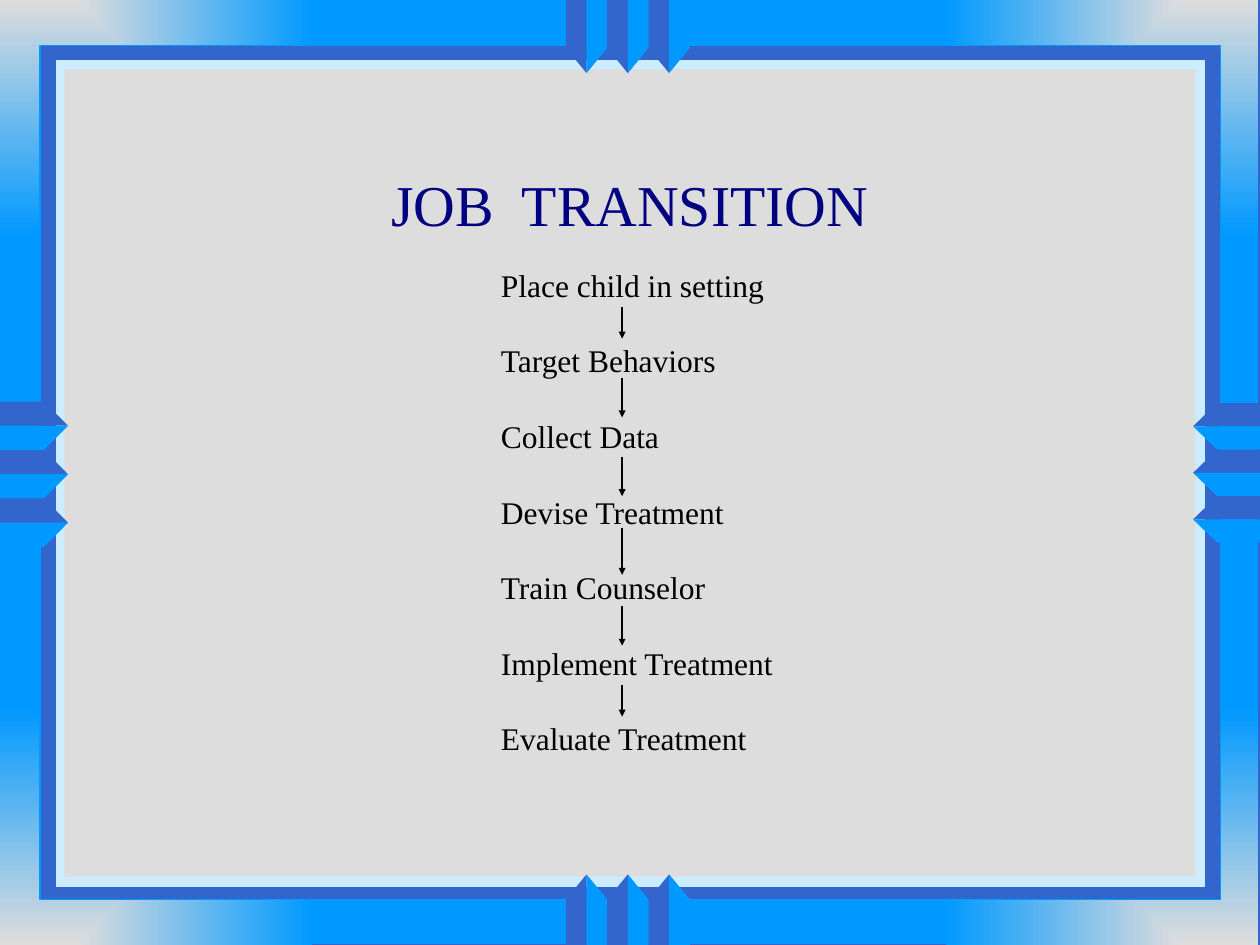
from dataclasses import dataclass

from lxml.etree import SubElement
from pptx import Presentation
from pptx.dml.color import RGBColor
from pptx.enum.shapes import MSO_CONNECTOR as Connector, MSO_SHAPE as Shape
from pptx.enum.text import MSO_ANCHOR as Anchor, MSO_AUTO_SIZE as AutoSize, PP_ALIGN as Align
from pptx.oxml import parse_xml
from pptx.oxml.ns import nsdecls, qn
from pptx.util import Pt


@dataclass(frozen=True)
class Theme:
    font: str = "Times New Roman"
    title_size: float = 33
    step_size: float = 18
    title: str = "000080"
    ink: str = "000000"
    panel: str = "DDDDDD"
    bright: str = "0099FF"
    dark: str = "3366CC"
    pale: str = "CCECFF"


theme = Theme()


def write_text(placeholder, lines, size, color, align, anchor, wrap=True, gap=0):
    frame = placeholder.text_frame
    frame.auto_size = AutoSize.NONE
    frame.word_wrap = wrap
    frame.vertical_anchor = anchor
    frame.text = "\n".join(lines)
    for paragraph in frame.paragraphs:
        paragraph.alignment = align
        paragraph.line_spacing = 1.0
        paragraph.space_before = Pt(0)
        paragraph.space_after = Pt(gap)
        properties = paragraph._p.get_or_add_pPr()
        properties.set("marL", "0")
        properties.set("indent", "0")
        SubElement(properties, qn("a:buNone"))
        font = paragraph.runs[0].font
        font.name, font.size = theme.font, Pt(size)
        font.color.rgb = RGBColor.from_string(color)


def paint(shape, fill, line=None):
    shape.shadow.inherit = False
    shape.fill.solid()
    shape.fill.fore_color.rgb = RGBColor.from_string(fill)
    if line:
        shape.line.color.rgb = RGBColor.from_string(line)
        shape.line.width = Pt(1)
    else:
        shape.line.fill.background()


presentation = Presentation()
presentation.slide_width, presentation.slide_height = Pt(720), Pt(540)
slide = presentation.slides.add_slide(presentation.slide_layouts[1])
shapes = slide.shapes
slide.background.fill.solid()
slide.background.fill.fore_color.rgb = RGBColor.from_string(theme.dark)

# Corner quarters, each shading inwards from its own corner of the slide
for row in range(2):
    for column in range(2):
        quarter = shapes.add_shape(Shape.RECTANGLE, Pt(360 * column), Pt(270 * row),
                                   Pt(358.8), Pt(269.5))
        paint(quarter, theme.bright)
        left, top = column * 100000, row * 100000
        gradient = parse_xml(
            f'<a:gradFill {nsdecls("a")} rotWithShape="1"><a:gsLst>'
            f'<a:gs pos="0"><a:srgbClr val="{theme.panel}"/></a:gs>'
            f'<a:gs pos="100000"><a:srgbClr val="{theme.bright}"/></a:gs></a:gsLst>'
            f'<a:path path="rect"><a:fillToRect l="{left}" t="{top}" '
            f'r="{100000 - left}" b="{100000 - top}"/></a:path></a:gradFill>')
        properties = quarter._element.spPr
        properties.replace(properties.find(qn("a:solidFill")), gradient)

# Nested frame around the panel
for left, top, width, height, fill, line in (
    (23, 26, 674.5, 488, theme.dark, theme.bright),
    (31.3, 33.8, 657.8, 473.4, theme.pale, theme.dark),
    (36.8, 39.5, 646.5, 461.5, theme.panel, None),
):
    paint(shapes.add_shape(Shape.RECTANGLE, Pt(left), Pt(top), Pt(width), Pt(height)), fill, line)

# Three folded ribbons on each edge, a dark and a bright half meeting at the tip
for horizontal, center, half, outer, shoulder, point in (
    (True, 358.8, 11.8, 0, 27.4, 41.8),
    (True, 358.8, 11.8, 540, 514, 499.7),
    (False, 271, 13.85, 0, 25.2, 38.9),
    (False, 270.2, 13.3, 720, 695.5, 681.8),
):
    for position in (-1, 0, 1):
        tip = center + 2 * half * position
        for side, color in ((-half, theme.dark), (half, theme.bright)):
            corners = [(tip + side, outer), (tip + side, shoulder), (tip, point), (tip, outer)]
            if not horizontal:
                corners = [(depth, along) for along, depth in corners]
            corners = [(Pt(x), Pt(y)) for x, y in corners]
            builder = shapes.build_freeform(*corners[0], scale=1.0)
            builder.add_line_segments(corners[1:], close=True)
            paint(builder.convert_to_shape(), color)

# Title and steps, brought in front of the frame
title, steps = shapes.title, slide.placeholders[1]
for placeholder, left, top, width, height in (
    (title, 130.5, 103.5, 459, 36),
    (steps, 279, 148.3, 171.5, 291),
):
    placeholder.left, placeholder.top = Pt(left), Pt(top)
    placeholder.width, placeholder.height = Pt(width), Pt(height)
    shapes.element.append(placeholder._element)

write_text(title, ["JOB  TRANSITION"], size=theme.title_size, color=theme.title,
           align=Align.CENTER, anchor=Anchor.BOTTOM)
write_text(steps, ["Place child in setting", "Target Behaviors", "Collect Data",
                   "Devise Treatment", "Train Counselor", "Implement Treatment",
                   "Evaluate Treatment"],
           size=theme.step_size, color=theme.ink, align=Align.LEFT, anchor=Anchor.TOP,
           wrap=False, gap=21.6)

# Arrows between the steps
for start, end in ((175.5, 193.5), (216, 238.5), (261, 283.5),
                   (301.5, 328.5), (346.5, 369), (391.5, 409.5)):
    arrow = shapes.add_connector(Connector.STRAIGHT, Pt(355.5), Pt(start), Pt(355.5), Pt(end))
    arrow.line.color.rgb = RGBColor.from_string(theme.ink)
    arrow.line.width = Pt(1)
    SubElement(arrow.line._get_or_add_ln(), qn("a:tailEnd"), type="triangle", w="sm", len="sm")
    SubElement(arrow._element.spPr, qn("a:effectLst"))

presentation.save("out.pptx")
